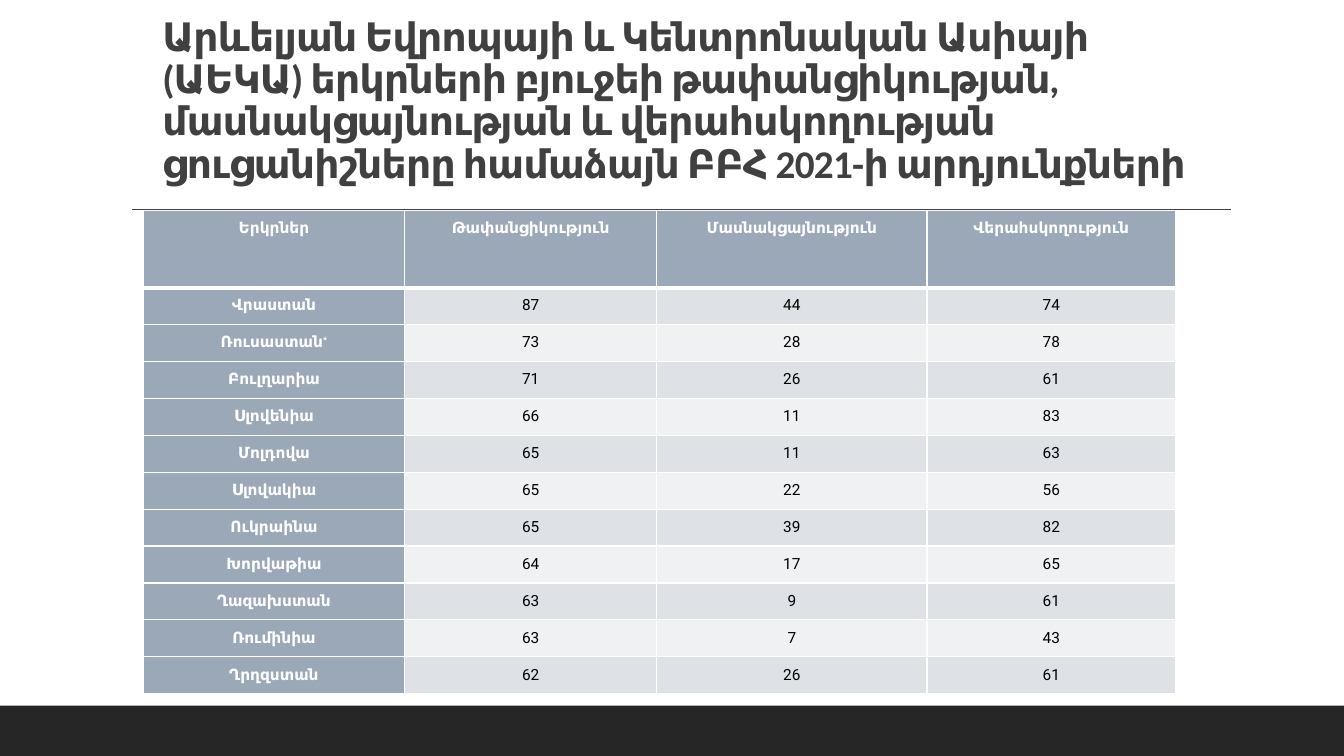
from pptx import Presentation, util as u
from pptx.dml.color import RGBColor
from pptx.enum import shapes, text
from pptx.oxml.ns import qn
from lxml import etree

TITLE = ("Արևելյան Եվրոպայի և Կենտրոնական Ասիայի (ԱԵԿԱ) երկրների բյուջեի "
         "թափանցիկության, մասնակցայնության և վերահսկողության ցուցանիշները "
         "համաձայն ԲԲՀ 2021-ի արդյունքների")
HEAD = ("Երկրներ", "Թափանցիկություն", "Մասնակցայնություն", "Վերահսկողություն")
ROWS = [
    ("Վրաստան", 87, 44, 74),
    ("Ռուսաստան*", 73, 28, 78),
    ("Բուլղարիա", 71, 26, 61),
    ("Սլովենիա", 66, 11, 83),
    ("Մոլդովա", 65, 11, 63),
    ("Սլովակիա", 65, 22, 56),
    ("Ուկրաինա", 65, 39, 82),
    ("Խորվաթիա", 64, 17, 65),
    ("Ղազախստան", 63, 9, 61),
    ("Ռումինիա", 63, 7, 43),
    ("Ղրղզստան", 62, 26, 61),
]
COLS = (6.59, 6.35, 6.81, 6.27)
HEAD_H, ROW_H = 1.94, 0.93
THEME = {
    "ink": "404040", "foot": "262626", "head": "9BA8B7", "bands": ("DEE1E6", "EFF1F3"),
    "white": "FFFFFF", "black": "000000",
    "title": ("Calibri", 28), "cell": ("Roboto", 11), "rule": 1, "thick": 3,
}


def color(name):
    return RGBColor.from_string(name)


def add_run(par, words, font, tint, bold):
    run = par.add_run()
    run.text = words
    run.font.name, run.font.size = font[0], u.Pt(font[1])
    run.font.bold = bold
    run.font.color.rgb = color(tint)
    return run.font._element


def add_edge(props, side, width, spot):
    line = etree.Element(qn("a:ln" + side), w=str(u.Pt(width)))
    fill = etree.SubElement(line, qn("a:solidFill"))
    etree.SubElement(fill, qn("a:srgbClr"), val=THEME["white"])
    props.insert(spot, line)


def fill_cell(cell, words, row, col):
    label = row == 0 or col == 0
    cell.fill.solid()
    cell.fill.fore_color.rgb = color(THEME["head"] if label else THEME["bands"][(row - 1) % 2])
    cell.margin_left = cell.margin_right = u.Cm(0.18)
    cell.margin_top = cell.margin_bottom = 0
    par = cell.text_frame.paragraphs[0]
    par.alignment = text.PP_ALIGN.CENTER
    par.line_spacing = 1.5
    tint = THEME["white"] if label else THEME["black"]
    name, star, _ = str(words).partition("*")
    add_run(par, name, THEME["cell"], tint, label)
    if star:
        add_run(par, star, THEME["cell"], tint, label).set("baseline", "30000")
    thick = {(0, "B"), (1, "T")}
    for spot, side in enumerate("LRTB"):
        width = THEME["thick"] if (row, side) in thick else THEME["rule"]
        add_edge(cell._tc.get_or_add_tcPr(), side, width, spot)


def add_frame(slide):
    foot = slide.shapes.add_shape(shapes.MSO_SHAPE.RECTANGLE, 0, u.Cm(17.78), u.Cm(33.87), u.Cm(1.27))
    foot.shadow.inherit = False
    foot.fill.solid()
    foot.fill.fore_color.rgb = color(THEME["foot"])
    foot.line.fill.background()
    rule = slide.shapes.add_connector(shapes.MSO_CONNECTOR.STRAIGHT,
                                      u.Cm(3.33), u.Cm(5.28), u.Cm(31.01), u.Cm(5.28))
    rule.line.color.rgb = color(THEME["ink"])
    rule.line.width = u.Pt(THEME["rule"])
    etree.SubElement(rule._element.spPr, qn("a:effectLst"))


def add_title(slide):
    box = slide.shapes.add_textbox(u.Cm(3.84), u.Cm(0.97), u.Cm(27.15), u.Cm(3.86))
    frame = box.text_frame
    frame.word_wrap = True
    frame.vertical_anchor = text.MSO_ANCHOR.BOTTOM
    par = frame.paragraphs[0]
    par.line_spacing = 0.9
    add_run(par, TITLE, THEME["title"], THEME["ink"], True).set("spc", "-50")


def add_grid(slide):
    data = [HEAD, *ROWS]
    high = HEAD_H + ROW_H * len(ROWS)
    grid = slide.shapes.add_table(len(data), len(COLS), u.Cm(3.61), u.Cm(5.31),
                                  u.Cm(sum(COLS)), u.Cm(high)).table
    for col, wide in enumerate(COLS):
        grid.columns[col].width = u.Cm(wide)
    for row, items in enumerate(data):
        grid.rows[row].height = u.Cm(ROW_H if row else HEAD_H)
        for col, words in enumerate(items):
            fill_cell(grid.cell(row, col), words, row, col)


def main():
    deck = Presentation()
    deck.slide_width, deck.slide_height = u.Cm(33.87), u.Cm(19.05)
    slide = deck.slides.add_slide(deck.slide_layouts[6])
    add_frame(slide)
    add_title(slide)
    add_grid(slide)
    deck.save("out.pptx")


if __name__ == "__main__":
    main()
